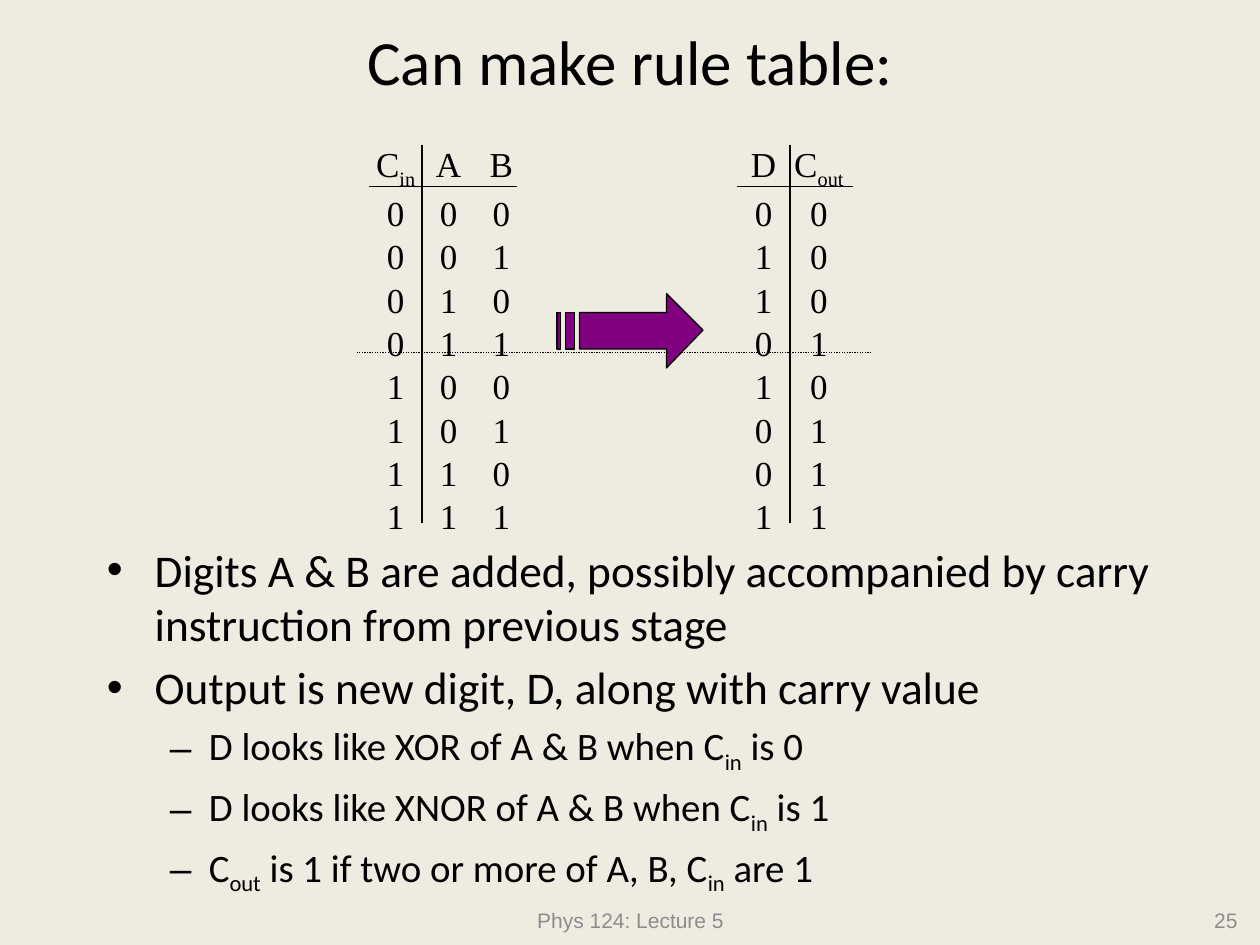
import pptx
import pptx.util
import pptx.dml.color
import pptx.enum.dml
import pptx.enum.shapes
import pptx.enum.text
from lxml import etree
from pptx.oxml.ns import qn

Inches, Pt = pptx.util.Inches, pptx.util.Pt
ALIGN = pptx.enum.text.PP_ALIGN
ANCHOR = pptx.enum.text.MSO_ANCHOR

# Content: "_" before a run's text marks a subscript
TITLE = "Can make rule table:"
FOOTER = "Phys 124: Lecture 5"
PAGE = "25"
INPUTS = [(["C", "_in"], ["A"], ["B"])] + [
    tuple([bit] for bit in f"{n:03b}") for n in range(8)]
OUTPUTS = [(["D"], ["C", "_out"])] + [
    tuple([bit] for bit in row)
    for row in ("00", "10", "10", "01", "10", "01", "01", "11")]
BULLETS = [
    (0, ["Digits A & B are added, possibly accompanied by carry "
         "instruction from previous stage"]),
    (0, ["Output is new digit, D, along with carry value"]),
    (1, ["D looks like XOR of A & B when C", "_in", " is 0"]),
    (1, ["D looks like XNOR of A & B when C", "_in", " is 1"]),
    (1, ["C", "_out", " is 1 if two or more of A, B, C", "_in", " are 1"]),
]
# Per level: size, left indent, hanging indent, bullet
LEVELS = [(25.9, 0.38, 0.38, "•"), (22.2, 0.81, 0.31, "–")]
# Rows, left edge, column widths, right end of the header rule
TABLES = [(INPUTS, 2.93, (0.42, 0.42, 0.42), 4.1),
          (OUTPUTS, 5.85, (0.42, 0.46), 6.77)]
TABLE_TOP, TABLE_BOTTOM, HEADER_RULE = 1.15, 4.15, 1.48
HEADER_H, ROW_H = 0.38, 0.333
COLORS = {"background": "EEECE1", "ink": "000000",
          "footer": "8C8C8C", "arrow": "800080"}


def color(name):
    return pptx.dml.color.RGBColor.from_string(COLORS[name])


def add_runs(p, runs, size, font, ink="ink"):
    for text in runs:
        r = p.add_run()
        r.text = text.removeprefix("_")
        r.font.size, r.font.name = Pt(size), font
        r.font.color.rgb = color(ink)
        if text.startswith("_"):
            r.font._element.set("baseline", "-25000")


def add_box(s, x, y, w, h, anchor=ANCHOR.MIDDLE):
    tf = s.shapes.add_textbox(Inches(x), Inches(y), Inches(w), Inches(h)).text_frame
    tf.word_wrap = True
    tf.vertical_anchor = anchor
    return tf


def add_label(s, box, text, size, font, align, ink="ink"):
    p = add_box(s, *box).paragraphs[0]
    p.alignment = align
    add_runs(p, [text], size, font, ink)


def add_rule(s, x1, y1, x2, y2, dash=None):
    line = s.shapes.add_connector(
        pptx.enum.shapes.MSO_CONNECTOR.STRAIGHT,
        Inches(x1), Inches(y1), Inches(x2), Inches(y2))
    line.line.color.rgb, line.line.width = color("ink"), Pt(0.75)
    if dash:
        line.line.dash_style = dash
    etree.SubElement(line._element.spPr, qn("a:effectLst"))


def add_truth_table(s, rows, left, widths, rule_end):
    height = HEADER_H + ROW_H * (len(rows) - 1)
    table = s.shapes.add_table(
        len(rows), len(widths), Inches(left), Inches(TABLE_TOP),
        Inches(sum(widths)), Inches(height)).table
    table.first_row = table.horz_banding = False
    # Plain style: no grid, no bands
    table._tbl.tblPr.find(qn("a:tableStyleId")).text = (
        "{2D5ABB26-0587-4C30-8999-92F81FD0307C}")
    for column, width in zip(table.columns, widths):
        column.width = Inches(width)
    for i, row in enumerate(rows):
        table.rows[i].height = Inches(ROW_H if i else HEADER_H)
        for j, runs in enumerate(row):
            cell = table.cell(i, j)
            cell.fill.background()
            cell.margin_left = cell.margin_right = cell.margin_bottom = 0
            cell.margin_top = Inches(0.01)
            p = cell.text_frame.paragraphs[0]
            p.alignment = ALIGN.CENTER
            add_runs(p, runs, 20, "Times New Roman")
    divider = left + widths[0]
    add_rule(s, divider, TABLE_TOP, divider, TABLE_BOTTOM)
    add_rule(s, left, HEADER_RULE, rule_end, HEADER_RULE)


def add_striped_arrow(s):
    top, bottom = 2.48, 2.77
    head = [(5.29, 2.33), (5.29, top), (4.6, top), (4.6, bottom),
            (5.29, bottom), (5.29, 2.92), (5.58, 2.62)]
    stripes = [[(a, top), (a, bottom), (b, bottom), (b, top)]
               for a, b in ((4.49, 4.56), (4.42, 4.45))]
    outlines = [[(Inches(x), Inches(y)) for x, y in points]
                for points in (head, *stripes)]
    builder = s.shapes.build_freeform(*outlines[0][0])
    for i, (start, *rest) in enumerate(outlines):
        if i:
            builder.move_to(*start)
        builder.add_line_segments(rest, close=True)
    arrow = builder.convert_to_shape()
    arrow.shadow.inherit = False
    arrow.fill.solid()
    arrow.fill.fore_color.rgb = color("arrow")
    arrow.line.color.rgb, arrow.line.width = color("ink"), Pt(0.75)


def add_bullets(s):
    tf = add_box(s, 0.75, 4.25, 8.5, 2.58, ANCHOR.TOP)
    for i, (level, runs) in enumerate(BULLETS):
        size, indent, hanging, mark = LEVELS[level]
        p = tf.add_paragraph() if i else tf.paragraphs[0]
        p.level = level
        p.space_before = Pt(round(size * 0.2, 1))
        pPr = p._p.get_or_add_pPr()
        pPr.set("marL", str(Inches(indent)))
        pPr.set("indent", str(-Inches(hanging)))
        etree.SubElement(pPr, qn("a:buFont"), typeface="Arial")
        etree.SubElement(pPr, qn("a:buChar"), char=mark)
        add_runs(p, runs, size, "Calibri")


def main():
    prs = pptx.Presentation()
    prs.slide_width, prs.slide_height = Inches(10), Inches(7.5)
    s = prs.slides.add_slide(prs.slide_layouts[6])
    s.background.fill.solid()
    s.background.fill.fore_color.rgb = color("background")

    # Footer and title
    add_label(s, (3.42, 7.1, 3.17, 0.4), FOOTER, 12, "Arial", ALIGN.CENTER, "footer")
    add_label(s, (7.59, 7.1, 2.33, 0.4), PAGE, 12, "Arial", ALIGN.RIGHT, "footer")
    add_label(s, (0.5, 0.08, 9, 0.8), TITLE, 36, "Calibri", ALIGN.CENTER)

    # Rule tables, split where the carry-in changes
    add_rule(s, 2.83, 2.8, 6.92, 2.8, pptx.enum.dml.MSO_LINE.ROUND_DOT)
    for table in TABLES:
        add_truth_table(s, *table)
    add_striped_arrow(s)

    add_bullets(s)
    prs.save("out.pptx")


if __name__ == "__main__":
    main()
